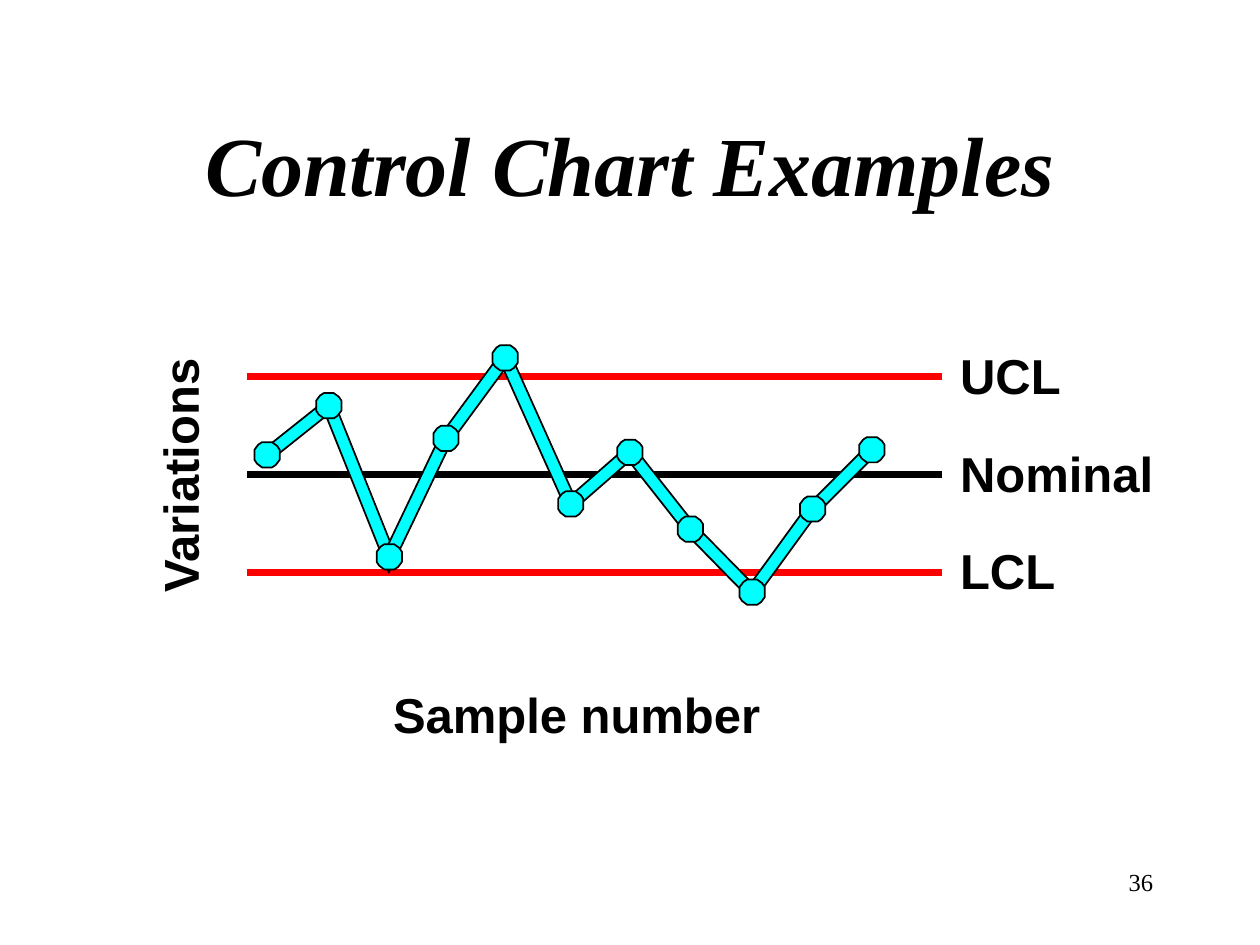
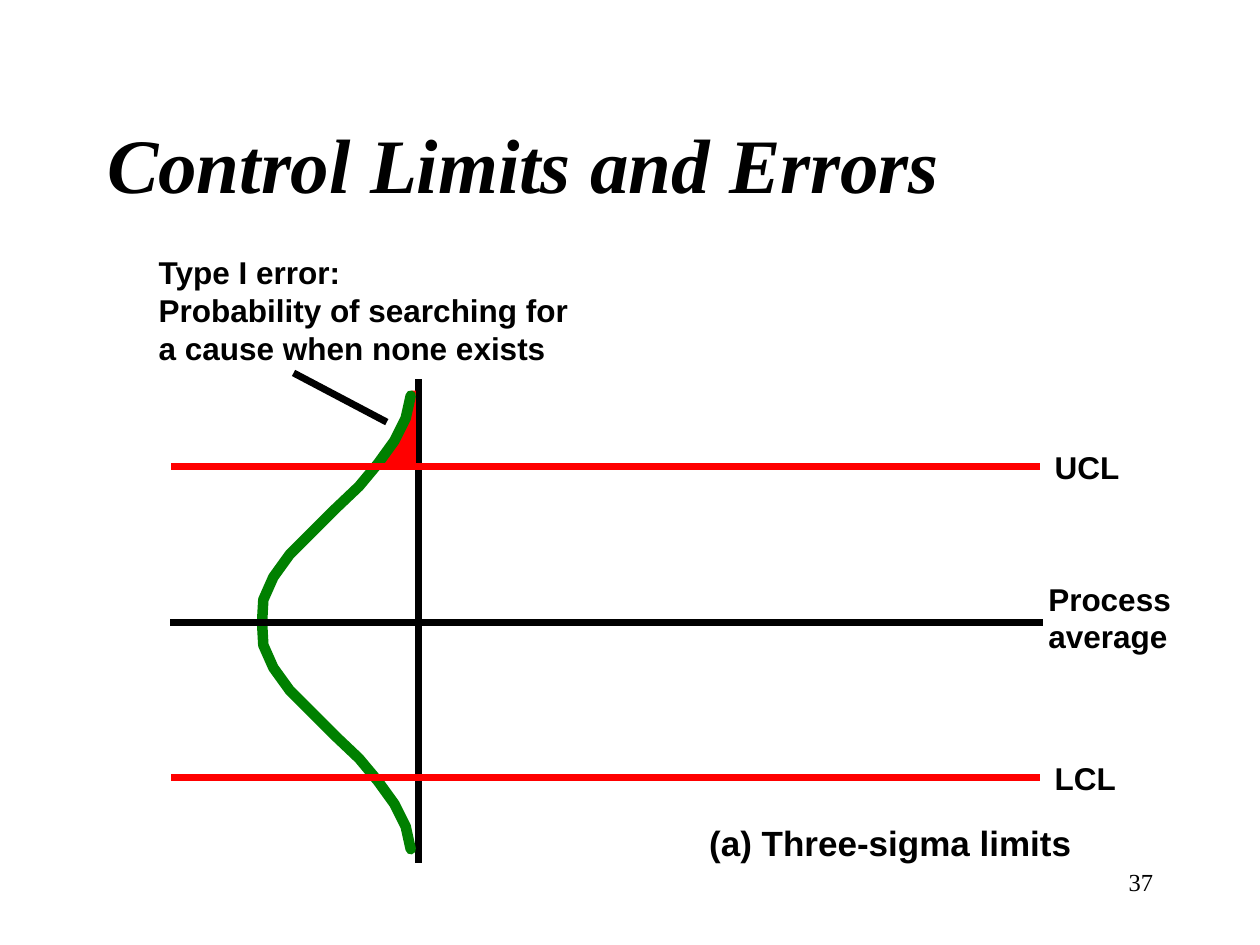
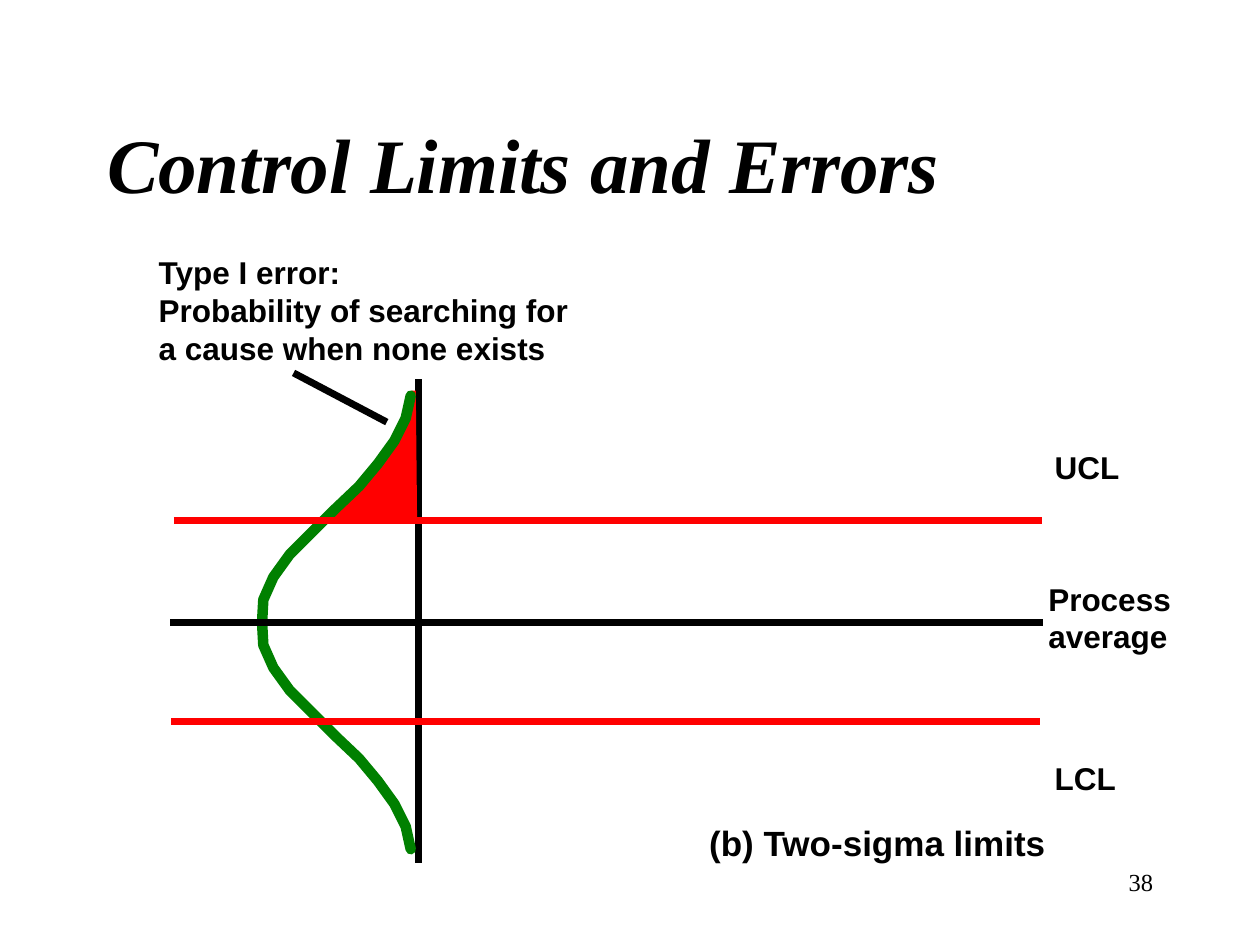
from math import hypot

from lxml.etree import SubElement
from pptx import Presentation
from pptx.dml.color import RGBColor
from pptx.enum.shapes import MSO_CONNECTOR
from pptx.enum.text import MSO_ANCHOR, MSO_AUTO_SIZE, PP_ALIGN
from pptx.oxml.ns import qn
from pptx.util import Inches, Pt

COLORS = {"ink": "000000", "limit": "FF0000", "series": "00FFFF", "curve": "008000"}
SERIF, SANS = "Times New Roman", "Arial"

SAMPLES = [(2.12, 3.61), (2.61, 3.22), (3.09, 4.42), (3.54, 3.48), (4.01, 2.84), (4.53, 4.0),
           (5.0, 3.59), (5.48, 4.2), (5.97, 4.7), (6.45, 4.04), (6.92, 3.57)]
LEVELS = [("UCL", 2.99, 1.42, "limit"), ("Nominal", 3.77, 2.15, "ink"), ("LCL", 4.54, 1.38, "limit")]
BAND_HALF = 0.05
MARKER_QUARTER = [(0, 0.1), (0.04, 0.1), (0.07, 0.08), (0.1, 0.04)]

AVERAGE_Y = 4.94
BELL_STEP = 0.18
BELL_X = [2.08, 2.09, 2.17, 2.3, 2.48, 2.66, 2.85, 3.0, 3.13, 3.22, 3.26]
ERROR_NOTE = "Type I error:\nProbability of searching for\na cause when none exists"
LIMIT_LABELS = [("UCL", 3.44, 1.0, 0.55, 0.23), ("Process\naverage", 4.51, 1.34, 0.79, 0.18),
                ("LCL", 5.91, 0.97, 0.55, 0.23)]
ERROR_SLIDES = [
    dict(number=37, caption="(a) Three-sigma limits", width=3.08, limits=[(1.36, 3.7), (1.36, 6.17)],
         tail=[(2.97, 3.7), (3.11, 3.51), (3.22, 3.32), (3.27, 3.1), (3.3, 3.1), (3.3, 3.7)]),
    dict(number=38, caption="(b) Two-sigma limits", width=2.89, limits=[(1.38, 4.13), (1.36, 5.73)],
         tail=[(2.59, 4.13), (2.96, 3.73), (3.22, 3.32), (3.27, 3.1), (3.3, 3.1), (3.31, 4.12)]),
]


def rgb(name):
    return RGBColor.from_string(COLORS[name])


def write(sp, text, size=18, font=SANS, bold=True, italic=False, align=PP_ALIGN.LEFT,
          anchor=MSO_ANCHOR.TOP, inset=0.1, wrap=False):
    tf = sp.text_frame
    tf.word_wrap = wrap
    tf.auto_size = MSO_AUTO_SIZE.NONE if wrap else MSO_AUTO_SIZE.SHAPE_TO_FIT_TEXT
    tf.vertical_anchor = anchor
    tf.margin_left = tf.margin_right = Inches(inset)
    tf.margin_top = tf.margin_bottom = Inches(inset / 2)
    for i, line in enumerate(text.split("\n")):
        p = tf.add_paragraph() if i else tf.paragraphs[0]
        p.alignment = align
        r = p.add_run()
        r.text = line
        f = r.font
        f.name, f.size, f.bold, f.italic = font, Pt(size), bold, italic
        f.color.rgb = rgb("ink")
    return sp


def place(sp, *box):
    sp.left, sp.top, sp.width, sp.height = map(Inches, box)
    return sp


def label(s, text, box, **fmt):
    return write(s.shapes.add_textbox(*map(Inches, box)), text, **fmt)


def add_line(s, start, end, color="ink"):
    sp = s.shapes.add_connector(MSO_CONNECTOR.STRAIGHT, *map(Inches, (*start, *end)))
    sp.line.color.rgb = rgb(color)
    sp.line.width = Pt(4)
    SubElement(sp._element.spPr, qn("a:effectLst"))


def outline(s, points, fill=None, line=None, width=1, close=True):
    (x, y), *rest = [(Inches(px), Inches(py)) for px, py in points]
    fb = s.shapes.build_freeform(x, y, scale=1.0)
    fb.add_line_segments(rest, close=close)
    sp = fb.convert_to_shape()
    sp.shadow.inherit = False
    if fill:
        sp.fill.solid()
        sp.fill.fore_color.rgb = rgb(fill)
    else:
        sp.fill.background()
    if line:
        sp.line.color.rgb = rgb(line)
        sp.line.width = Pt(width)
    else:
        sp.line.fill.background()
    return sp


def new_slide(prs, title, number, width, size, align):
    s = prs.slides.add_slide(prs.slide_layouts[5])
    write(place(s.shapes.title, 0.75, 0.67, width, 1.25), title, size=size, font=SERIF,
          italic=True, align=align, anchor=MSO_ANCHOR.MIDDLE, wrap=True)
    label(s, str(number), (7.17, 6.83, 2.08, 0.5), size=14, font=SERIF, bold=False,
          align=PP_ALIGN.RIGHT, wrap=True)
    return s


def normal(a, b):
    dx, dy = b[0] - a[0], b[1] - a[1]
    length = hypot(dx, dy)
    return -dy / length * BAND_HALF, dx / length * BAND_HALF


def shift(point, offset, k=1):
    return point[0] + k * offset[0], point[1] + k * offset[1]


def add_band(s, a, b):
    n = normal(a, b)
    corners = [shift(a, n, -1), shift(b, n, -1), shift(b, n), shift(a, n)]
    outline(s, corners, "series", "ink")


def add_joint(s, a, b, c):
    n, m = normal(a, b), normal(b, c)
    side = -1 if n[0] * m[1] - n[1] * m[0] > 0 else 1
    dot = (n[0] * m[0] + n[1] * m[1]) / BAND_HALF ** 2
    miter = (n[0] + m[0]) / (1 + dot), (n[1] + m[1]) / (1 + dot)
    corners = [shift(b, n, side), shift(b, miter, side), shift(b, m, side), b]
    outline(s, corners, "series", "ink")


def add_marker(s, center):
    ring, quarter = [], MARKER_QUARTER
    for _ in range(4):
        ring += quarter
        quarter = [(y, -x) for x, y in quarter]
    outline(s, [shift(center, offset) for offset in ring], "series", "ink")


def control_chart(prs):
    s = new_slide(prs, "Control Chart Examples", 36, 8.5, 48, PP_ALIGN.CENTER)
    for text, y, width, color in LEVELS:
        label(s, text, (7.32, y - 0.4, width, 0.78), size=28, inset=0.3)
        add_line(s, (1.96, y), (7.48, y), color)
    label(s, "Sample number", (2.82, 5.28, 3.54, 0.78), size=28, inset=0.3)
    label(s, "Variations", (0.38, 3.48, 2.08, 0.56), size=28).rotation = 270
    for i, (a, b) in enumerate(zip(SAMPLES, SAMPLES[1:])):
        add_band(s, a, b)
        if i:
            add_joint(s, SAMPLES[i - 1], a, b)
    for center in SAMPLES:
        add_marker(s, center)


def add_bell(s):
    half = [(x, BELL_STEP * k) for k, x in enumerate(BELL_X)]
    points = [(x, AVERAGE_Y + d) for x, d in reversed(half)]
    points += [(x, AVERAGE_Y - d) for x, d in half[1:]]
    ln = outline(s, points, line="curve", width=6, close=False).line._get_or_add_ln()
    ln.set("cap", "rnd")
    SubElement(ln, qn("a:round"))


def error_slide(prs, number, caption, width, limits, tail):
    s = new_slide(prs, "Control Limits and Errors", number, 7.74, 44, PP_ALIGN.LEFT)
    for text, top, w, h, inset in LIMIT_LABELS:
        label(s, text, (8.14, top, w, h), inset=inset)
    add_line(s, (3.32, 3.01), (3.32, 6.85))
    outline(s, tail, "limit")
    add_bell(s)
    for x, y in limits:
        add_line(s, (x, y), (x + 6.89, y), "limit")
    add_line(s, (1.35, AVERAGE_Y), (8.28, AVERAGE_Y))
    label(s, caption, (5.53, 6.47, width, 0.44), size=20)
    label(s, ERROR_NOTE, (1.08, 1.92, 3.67, 1.08), inset=0.18)
    add_line(s, (2.33, 2.96), (3.07, 3.35))


def main():
    prs = Presentation()
    prs.slide_width, prs.slide_height = Inches(10), Inches(7.5)
    control_chart(prs)
    for content in ERROR_SLIDES:
        error_slide(prs, **content)
    prs.save("out.pptx")


if __name__ == "__main__":
    main()
